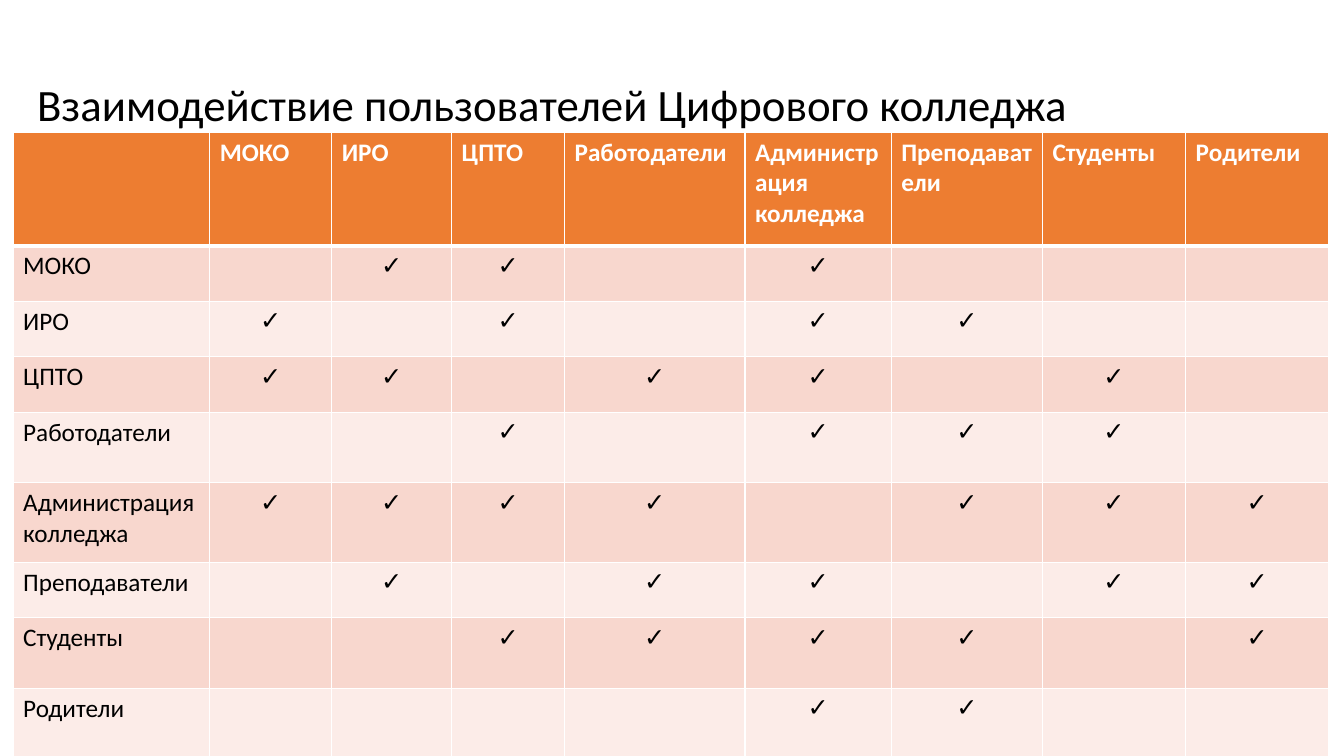
from lxml import etree
from pptx import Presentation
from pptx import util as u
from pptx.dml.color import RGBColor
from pptx.enum import text
from pptx.oxml.ns import qn

USERS = ["МОКО", "ИРО", "ЦПТО", "Работодатели", "Администрация колледжа",
         "Преподаватели", "Студенты", "Родители"]
CONTACTS = [".xx.x...", "x.x.xx..", "xx.xx.x.", "..x.xxx.",
            "xxxx.xxx", ".x.xx.xx", "..xxxx.x", "....xx.."]
COLUMN_WIDTHS = [1.95, 1.21, 1.19, 1.12, 1.79, 1.45, 1.5, 1.42, 1.42]
ROW_HEIGHTS = [1.13, 0.55, 0.55, 0.55, 0.7, 0.79, 0.55, 0.7, 0.7]
HEADER_FILL = "ED7D31"
BAND_FILLS = ["F8D7CE", "FCECE8"]
HEADER = dict(name="Calibri", size=u.Pt(18), bold=True, color="FFFFFF")
LABEL = dict(name="Calibri", size=u.Pt(18), bold=False, color="000000")
MARK = {**LABEL, "name": "Karla"}
TITLE = {**LABEL, "size": u.Pt(32)}


def paint(color_format, value):
    color_format.rgb = RGBColor.from_string(value)


def write(paragraph, words, formats):
    paragraph.text = words
    for name, value in formats.items():
        if name == "color":
            paint(paragraph.font.color, value)
        else:
            setattr(paragraph.font, name, value)


def add_borders(cell, widths):
    properties = cell._tc.get_or_add_tcPr()
    for side, width in widths.items():
        line = etree.SubElement(properties, qn(f"a:ln{side}"), w=str(u.Pt(width)))
        fill = etree.SubElement(line, qn("a:solidFill"))
        etree.SubElement(fill, qn("a:srgbClr"), val="FFFFFF")


def style_cell(cell, fill, top, bottom):
    add_borders(cell, dict(L=1, R=1, T=top, B=bottom))
    cell.fill.solid()
    paint(cell.fill.fore_color, fill)


def add_title(slide, left, top, width, height):
    shape = slide.shapes.add_textbox(*map(u.Inches, (left, top, width, height)))
    shape.text_frame.word_wrap = True
    shape.text_frame.vertical_anchor = text.MSO_ANCHOR.TOP
    paragraph = shape.text_frame.paragraphs[0]
    paragraph.line_spacing = 0.9
    write(paragraph, "Взаимодействие пользователей Цифрового колледжа", TITLE)


def add_contact_table(slide, left, top, width, height):
    shape = slide.shapes.add_table(len(ROW_HEIGHTS), len(COLUMN_WIDTHS),
                                   *map(u.Inches, (left, top, width, height)))
    table = shape.table
    for column, column_width in zip(table.columns, COLUMN_WIDTHS):
        column.width = u.Inches(column_width)
    for row, row_height in zip(table.rows, ROW_HEIGHTS):
        row.height = u.Inches(row_height)

    style_cell(table.cell(0, 0), HEADER_FILL, 1, 3)
    for number, user in enumerate(USERS, 1):
        header = table.cell(0, number)
        style_cell(header, HEADER_FILL, 1, 3)
        write(header.text_frame.paragraphs[0], user, HEADER)

        fill = BAND_FILLS[(number - 1) % 2]
        top_border = 3 if number == 1 else 1
        label = table.cell(number, 0)
        style_cell(label, fill, top_border, 1)
        write(label.text_frame.paragraphs[0], user, LABEL)
        for column, contact in enumerate(CONTACTS[number - 1], 1):
            cell = table.cell(number, column)
            style_cell(cell, fill, top_border, 1)
            if contact == "x":
                paragraph = cell.text_frame.paragraphs[0]
                paragraph.alignment = text.PP_ALIGN.CENTER
                write(paragraph, "✓", MARK)


def main():
    presentation = Presentation()
    presentation.slide_width = u.Inches(13.33)
    presentation.slide_height = u.Inches(7.5)
    slide = presentation.slides.add_slide(presentation.slide_layouts[6])
    add_contact_table(slide, 0.13, 1.31, sum(COLUMN_WIDTHS), sum(ROW_HEIGHTS))
    add_title(slide, 0.27, 0.77, 13.07, 0.75)
    presentation.save("out.pptx")


if __name__ == "__main__":
    main()
